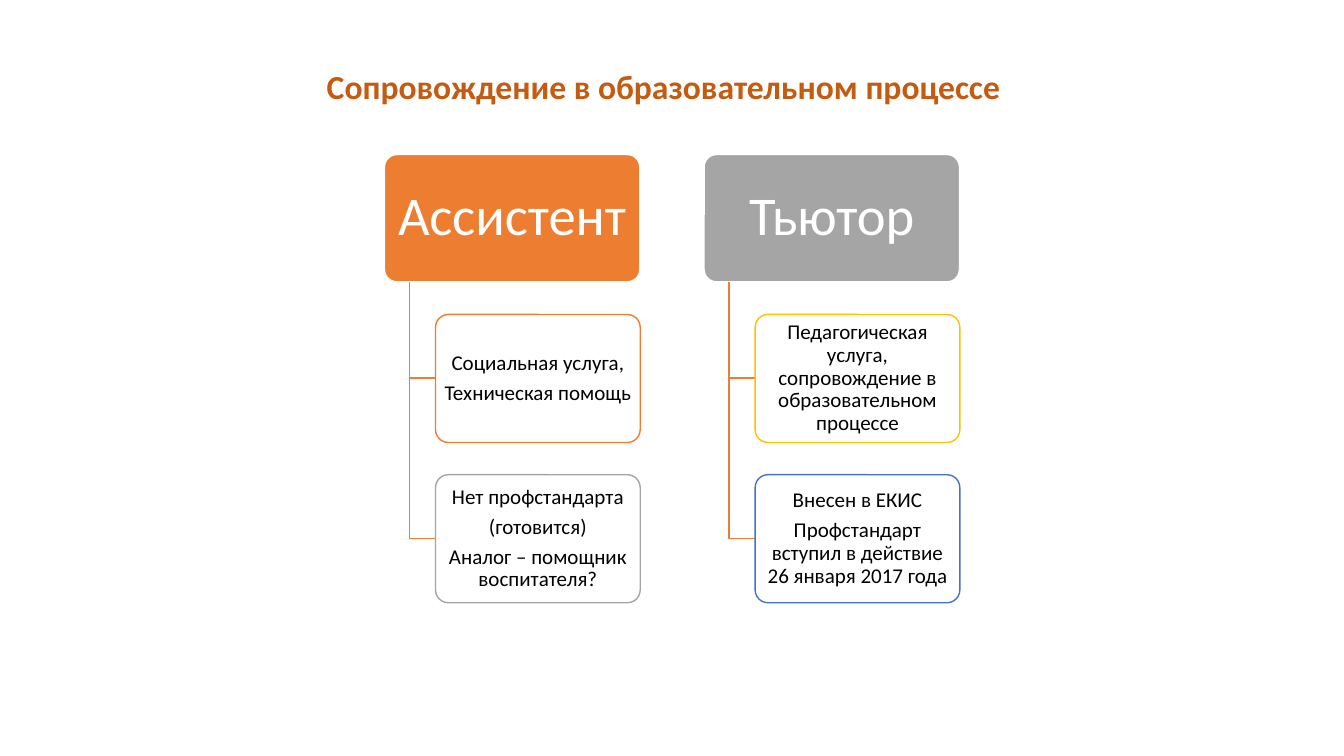
"""Builds a slide comparing two support roles as hierarchy columns."""
from dataclasses import dataclass

from lxml.etree import SubElement
from pptx import Presentation
from pptx.dml.color import RGBColor
from pptx.enum.shapes import MSO_SHAPE
from pptx.enum.text import MSO_ANCHOR, MSO_AUTO_SIZE, PP_ALIGN
from pptx.oxml.ns import qn
from pptx.util import Emu, Pt


@dataclass(frozen=True)
class Theme:
    font: str = "Calibri"
    title: str = "C55A11"
    orange: str = "ED7D31"
    gray: str = "A5A5A5"
    gold: str = "FFC000"
    blue: str = "4472C4"
    white: str = "FFFFFF"
    black: str = "000000"
    title_size: int = 24
    role_size: int = 39
    detail_size: int = 15


class SlideBuilder:
    PX = 9144

    def __init__(self, prs, theme):
        self.theme = theme
        prs.slide_width, prs.slide_height = self.px(1333), self.px(750)
        self.s = prs.slides.add_slide(prs.slide_layouts[5])

    def px(self, n):
        return Emu(n * self.PX)

    def add_run(self, p, text, size, color, bold=False):
        p.alignment = PP_ALIGN.CENTER
        r = p.add_run()
        r.text = text
        r.font.name = self.theme.font
        r.font.size = Pt(size)
        r.font.bold = bold
        r.font.color.rgb = RGBColor.from_string(color)

    def title(self, x, y, w, h, text):
        sp = self.s.shapes.title
        sp.left, sp.top, sp.width, sp.height = map(self.px, (x, y, w, h))
        tf = sp.text_frame
        tf.auto_size = MSO_AUTO_SIZE.NONE
        tf.vertical_anchor = MSO_ANCHOR.TOP
        self.add_run(tf.paragraphs[0], text, self.theme.title_size, self.theme.title, True)

    def box(self, x, y, w, h, fill, line, line_width, alpha=100):
        sp = self.s.shapes.add_shape(MSO_SHAPE.ROUNDED_RECTANGLE, *map(self.px, (x, y, w, h)))
        sp.shadow.inherit = False
        sp.adjustments[0] = 0.1
        sp.fill.solid()
        sp.fill.fore_color.rgb = RGBColor.from_string(fill)
        if alpha < 100:
            color = sp.element.spPr.find(qn("a:solidFill"))[0]
            SubElement(color, qn("a:alpha"), val=str(alpha * 1000))
        sp.line.color.rgb = RGBColor.from_string(line)
        sp.line.width = Pt(line_width)
        return sp

    def fill_text(self, sp, lines, size, color, inset_x, inset_y):
        tf = sp.text_frame
        tf.word_wrap = True
        tf.vertical_anchor = MSO_ANCHOR.MIDDLE
        tf.margin_left = tf.margin_right = self.px(inset_x)
        tf.margin_top = tf.margin_bottom = self.px(inset_y)
        for i, line in enumerate(lines):
            p = tf.add_paragraph() if i else tf.paragraphs[0]
            p.line_spacing = 0.9
            p.space_after = Pt(size * 0.35)
            self.add_run(p, line, size, color)

    def role(self, x, y, w, h, text, fill):
        sp = self.box(x, y, w, h, fill, self.theme.white, 1.5)
        self.fill_text(sp, [text], self.theme.role_size, self.theme.white, 8, 5)

    def detail(self, x, y, w, h, lines, outline):
        sp = self.box(x, y, w, h, self.theme.white, outline, 1, alpha=90)
        self.fill_text(sp, lines, self.theme.detail_size, self.theme.black, 3, 2)

    def elbow(self, x1, y1, x2, y2):
        fb = self.s.shapes.build_freeform(x1, y1, scale=self.PX)
        fb.add_line_segments([(x1, y2), (x2, y2)], close=False)
        sp = fb.convert_to_shape()
        sp.shadow.inherit = False
        sp.fill.background()
        sp.line.color.rgb = RGBColor.from_string(self.theme.orange)
        sp.line.width = Pt(1)


def main():
    theme = Theme()
    prs = Presentation()
    slide = SlideBuilder(prs, theme)
    slide.title(284, 60, 748, 50, "Сопровождение в образовательном процессе")

    columns = [
        ("Ассистент", theme.orange, [
            (["Социальная услуга,", "Техническая помощь"], theme.orange),
            (["Нет профстандарта", "(готовится)", "Аналог – помощник воспитателя?"],
             theme.gray),
        ]),
        ("Тьютор", theme.gray, [
            (["Педагогическая услуга, сопровождение в образовательном процессе"],
             theme.gold),
            (["Внесен в ЕКИС", "Профстандарт вступил в действие 26 января 2017 года"],
             theme.blue),
        ]),
    ]
    left, top, role_w, box_h = 381, 153, 254, 127
    column_step, row_step = 317, 159
    trunk, indent = 25, 51
    for col, (name, fill, details) in enumerate(columns):
        x = left + col * column_step
        slide.role(x, top, role_w, box_h, name, fill)
        for row, (lines, outline) in enumerate(details, start=1):
            y = top + row * row_step
            slide.elbow(x + trunk, top + box_h, x + indent, y + box_h // 2)
            slide.detail(x + indent, y, role_w - indent, box_h, lines, outline)

    prs.save("out.pptx")


if __name__ == "__main__":
    main()
